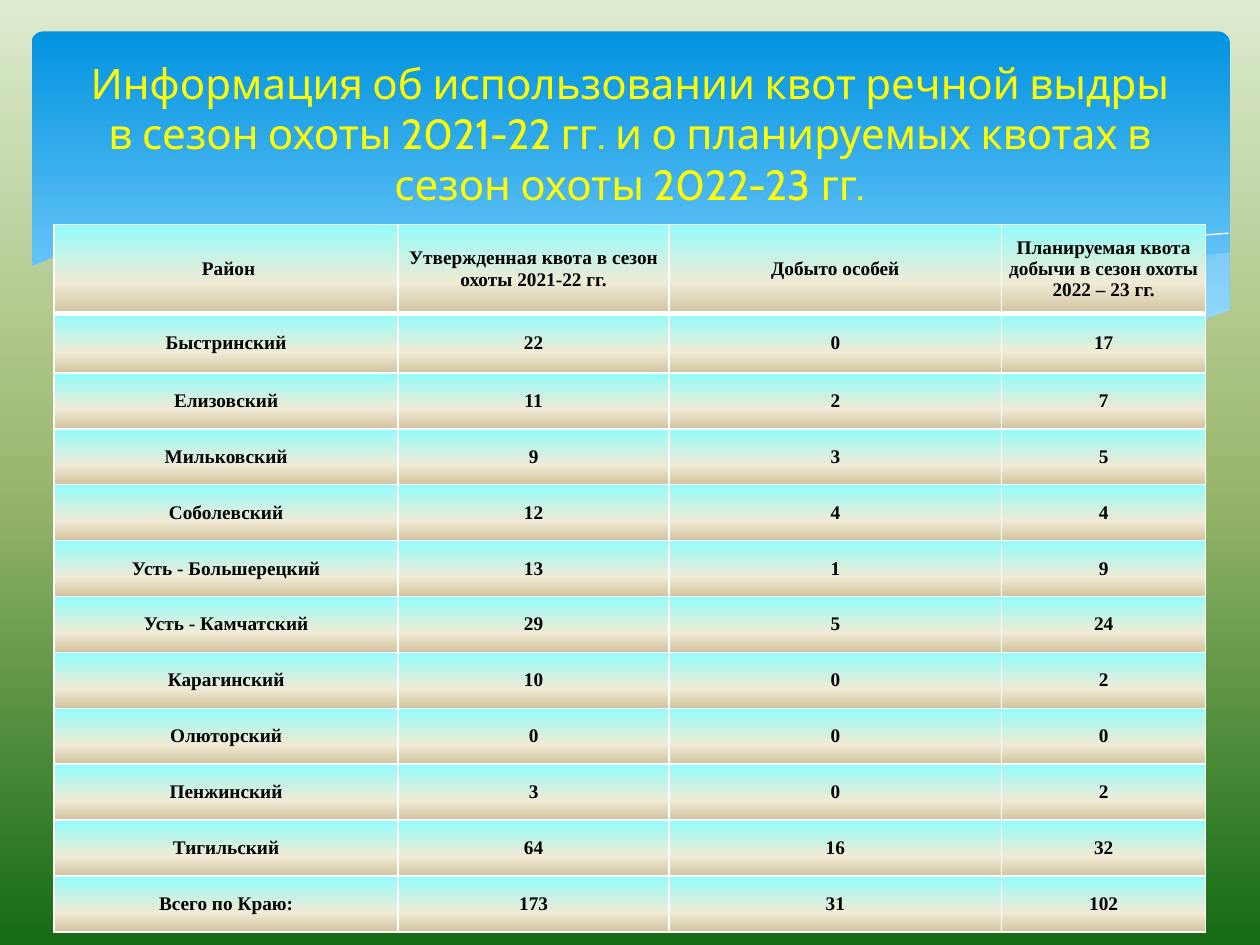
"""Build the slide on river otter hunting quotas by district."""
from dataclasses import dataclass
from typing import Optional

from lxml.etree import SubElement
from pptx import Presentation
from pptx.dml.color import RGBColor
from pptx.enum.shapes import MSO_SHAPE as Preset
from pptx.enum.text import MSO_ANCHOR as Anchor, MSO_AUTO_SIZE as AutoSize, PP_ALIGN as Align
from pptx.oxml.ns import qn
from pptx.util import Inches, Pt

WHITE = RGBColor(0xFF, 0xFF, 0xFF)
BLACK = RGBColor(0x00, 0x00, 0x00)
YELLOW = RGBColor(0xFF, 0xFF, 0x00)
PALE_BLUE = RGBColor(0xC6, 0xE7, 0xFC)
MEADOW = [(0, RGBColor(0xDD, 0xEB, 0xCF)), (50, RGBColor(0x9C, 0xB8, 0x6E)),
          (100, RGBColor(0x15, 0x6B, 0x13))]
SKY = [(0, RGBColor(0x02, 0x93, 0xE0)), (90, RGBColor(0x83, 0xD3, 0xFE))]
SAND = [(0, RGBColor(0x91, 0xFD, 0xFA)), (65, RGBColor(0xF0, 0xEB, 0xD5)),
        (100, RGBColor(0xD1, 0xC3, 0x9F))]

TITLE = ("Информация об использовании квот речной выдры в сезон охоты 2021-22 гг. "
         "и о планируемых квотах в сезон охоты 2022-23 гг.")
HEADER = (" Район", "Утвержденная квота в сезон охоты 2021-22 гг.", "Добыто особей",
          "Планируемая квота добычи в сезон охоты 2022 – 23 гг.")
QUOTAS = [
    ("Быстринский", 22, 0, 17),
    ("Елизовский", 11, 2, 7),
    ("Мильковский", 9, 3, 5),
    ("Соболевский", 12, 4, 4),
    ("Усть - Большерецкий", 13, 1, 9),
    ("Усть - Камчатский", 29, 5, 24),
    ("Карагинский", 10, 0, 2),
    ("Олюторский", 0, 0, 0),
    ("Пенжинский", 3, 0, 2),
    ("Тигильский", 64, 16, 32),
    ("Всего по Краю:", 173, 31, 102),
]
COLUMN_WIDTHS = (2.73, 2.15, 2.64, 1.62)
TABLE_TOP, TABLE_HEIGHT = 1.78, 5.62
HEADER_HEIGHT, FIRST_ROW_HEIGHT = 0.71, 0.47


@dataclass
class Wave:
    points: list[tuple[float, float]]
    opacity: Optional[int] = None
    outlined: bool = False


WAVES = [
    Wave([(9.76, 2), (9.48, 2.04), (9.06, 2.13), (8.61, 2.23), (8.05, 2.37), (7.53, 2.48),
          (7.06, 2.57), (6.61, 2.65), (7.05, 2.71), (7.45, 2.75), (7.81, 2.77), (8.14, 2.78),
          (8.44, 2.77), (8.72, 2.74), (8.97, 2.7), (9.21, 2.65), (9.42, 2.59), (9.63, 2.52),
          (9.76, 2.47)], opacity=29),
    Wave([(8.93, 2.73), (8.37, 2.65), (7.75, 2.54), (7.06, 2.4), (6.29, 2.22), (5.84, 2.11),
          (5.41, 2.03), (5.02, 1.96), (4.65, 1.91), (4.2, 1.87), (3.8, 1.85), (3.44, 1.86),
          (3.13, 1.88), (2.86, 1.91), (3.42, 1.99), (4.04, 2.11), (4.49, 2.22), (5.3, 2.4),
          (6.01, 2.55), (6.5, 2.64), (6.95, 2.7), (7.36, 2.75), (7.73, 2.77), (8.18, 2.78),
          (8.57, 2.77)], opacity=40),
    Wave([(3.09, 1.95), (3.28, 1.92), (3.53, 1.89), (3.87, 1.87), (4.33, 1.87), (4.89, 1.9),
          (5.33, 1.94), (5.82, 2), (6.36, 2.08), (6.95, 2.19), (7.6, 2.33), (8.31, 2.51),
          (9.07, 2.72)], outlined=True),
    Wave([(6.13, 2.57), (6.53, 2.46), (6.95, 2.35), (7.48, 2.23), (8.06, 2.1), (8.66, 1.99),
          (8.95, 1.94), (9.24, 1.9), (9.51, 1.87), (9.75, 1.85)], outlined=True),
    Wave([(9.77, 2.46), (9.5, 2.56), (9.2, 2.65), (8.87, 2.71), (8.5, 2.75), (8.09, 2.77),
          (7.61, 2.75), (7.08, 2.7), (6.48, 2.62), (5.79, 2.5), (5.03, 2.33), (4.47, 2.2),
          (3.91, 2.07), (3.4, 1.97), (2.92, 1.9), (2.5, 1.86), (2.11, 1.84), (1.77, 1.84),
          (1.46, 1.85), (1.19, 1.87), (0.95, 1.91), (0.67, 1.97), (0.46, 2.03), (0.23, 2.13),
          (0.23, 3.29), (9.77, 3.29)]),
]


def set_gradient(fill, element, stops: list) -> None:
    fill.gradient()
    fill.gradient_angle = 270
    stop_list = next(element.iter(qn("a:gsLst")))
    stop_list.clear()
    for position, color in stops:
        stop = SubElement(stop_list, qn("a:gs"), pos=str(position * 1000))
        SubElement(stop, qn("a:srgbClr"), val=str(color))


def draw_wave(page, wave: Wave) -> None:
    start, *rest = [(Inches(x), Inches(y)) for x, y in wave.points]
    builder = page.shapes.build_freeform(*start)
    builder.add_line_segments(rest, close=not wave.outlined)
    shape = builder.convert_to_shape()
    shape.shadow.inherit = False
    shape.line.fill.background()
    if wave.outlined:
        shape.fill.background()
        shape.line.color.rgb = WHITE
        shape.line.width = Pt(0)
    elif wave.opacity:
        shape.fill.solid()
        shape.fill.fore_color.rgb = PALE_BLUE
        color = shape._element.spPr.find(qn("a:solidFill")).find(qn("a:srgbClr"))
        SubElement(color, qn("a:alpha"), val=str(wave.opacity * 1000))
    else:
        shape._element.set("useBgFill", "1")
        shape._element.remove(shape._element.find(qn("p:style")))


def set_borders(cell, bottom_width: int) -> None:
    properties = cell._tc.get_or_add_tcPr()
    widths = {"a:lnL": 1, "a:lnR": 1, "a:lnT": 1, "a:lnB": bottom_width}
    for index, (side, width) in enumerate(widths.items()):
        border = SubElement(properties, qn(side), w=str(Pt(width)))
        SubElement(SubElement(border, qn("a:solidFill")), qn("a:srgbClr"), val=str(WHITE))
        properties.insert(index, border)


def fill_cell(cell, text: str, is_header: bool) -> None:
    cell.text = text
    cell.vertical_anchor = Anchor.MIDDLE
    cell.margin_left = cell.margin_right = Inches(0.04 if is_header else 0.07)
    cell.margin_top = cell.margin_bottom = Inches(0.05 if is_header else 0)
    para = cell.text_frame.paragraphs[0]
    para.alignment = Align.CENTER
    para.font.name = "Times New Roman"
    para.font.size = Pt(11)
    para.font.bold = True
    para.font.color.rgb = BLACK
    set_gradient(cell.fill, cell._tc, SAND)
    set_borders(cell, 3 if is_header else 1)


def draw_table(page) -> None:
    rows = [HEADER, *QUOTAS]
    table = page.shapes.add_table(len(rows), len(HEADER), Inches(0.43), Inches(TABLE_TOP),
                                  Inches(sum(COLUMN_WIDTHS)), Inches(TABLE_HEIGHT)).table
    for column, width in zip(table.columns, COLUMN_WIDTHS):
        column.width = Inches(width)
    other_height = (TABLE_HEIGHT - HEADER_HEIGHT - FIRST_ROW_HEIGHT) / (len(rows) - 2)
    heights = [HEADER_HEIGHT, FIRST_ROW_HEIGHT] + [other_height] * (len(rows) - 2)
    for row, values, height in zip(table.rows, rows, heights):
        row.height = Inches(height)
        for cell, value in zip(row.cells, values):
            fill_cell(cell, str(value), values is HEADER)


def draw_banner(page) -> None:
    banner = page.shapes.add_shape(Preset.ROUNDED_RECTANGLE, Inches(0.25), Inches(0.25),
                                   Inches(9.51), Inches(2.7))
    banner.adjustments[0] = 0.034
    banner.shadow.inherit = False
    banner.line.fill.background()
    set_gradient(banner.fill, banner._element, SKY)


def place_title(page) -> None:
    title = page.shapes.title
    title.left, title.top, title.width, title.height = map(Inches, (0.5, 0.37, 9, 1.37))
    frame = title.text_frame
    frame.text = TITLE
    frame.word_wrap = True
    frame.auto_size = AutoSize.NONE
    frame.vertical_anchor = Anchor.MIDDLE
    para = frame.paragraphs[0]
    para.alignment = Align.CENTER
    para.font.name = "Cabin"
    para.font.size = Pt(24)
    para.font.color.rgb = YELLOW
    page.shapes._spTree.append(title._element)


def main() -> None:
    deck = Presentation()
    deck.slide_width, deck.slide_height = Inches(10), Inches(7.5)
    page = deck.slides.add_slide(deck.slide_layouts[5])
    set_gradient(page.background.fill, page._element, MEADOW)
    draw_banner(page)
    for wave in WAVES:
        draw_wave(page, wave)
    draw_table(page)
    place_title(page)
    deck.save("out.pptx")


if __name__ == "__main__":
    main()
